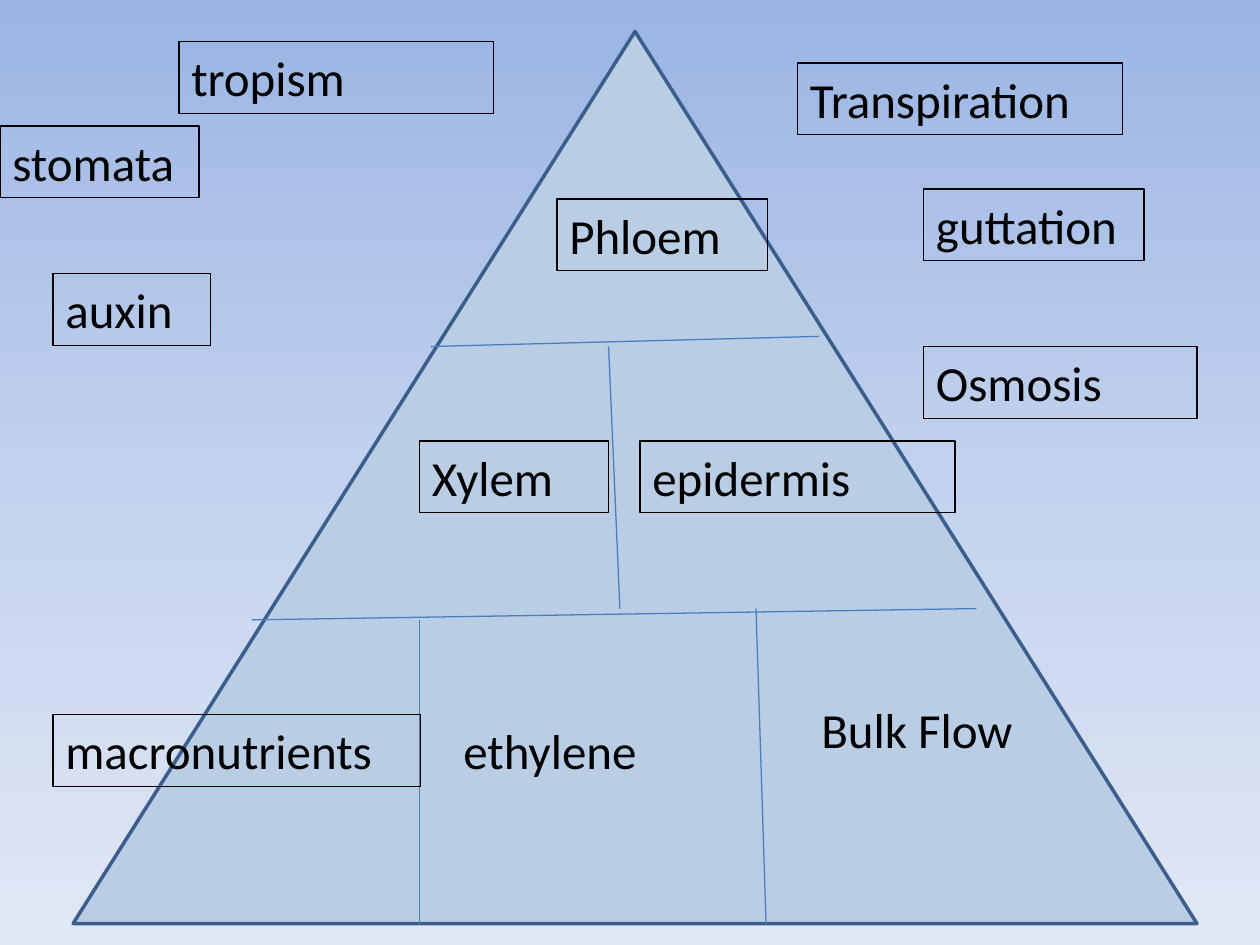
from copy import deepcopy

from lxml.etree import SubElement
from pptx import Presentation
from pptx.dml.color import RGBColor
from pptx.enum.shapes import MSO_CONNECTOR, MSO_SHAPE
from pptx.enum.text import MSO_AUTO_SIZE
from pptx.oxml.ns import qn
from pptx.util import Inches, Pt

SKY_STOPS = [
    (0, RGBColor(0x9A, 0xB5, 0xE4)),
    (0.5, RGBColor(0xC2, 0xD1, 0xED)),
    (1, RGBColor(0xE1, 0xE8, 0xF5)),
]
PYRAMID_FILL = RGBColor(0xB9, 0xCD, 0xE5)
PYRAMID_EDGE = RGBColor(0x3A, 0x5F, 0x8C)
DIVIDER_BLUE = RGBColor(0x4B, 0x7E, 0xBC)
BLACK = RGBColor(0, 0, 0)

TERM_HEIGHT = 0.57
TERM_FONT = {"name": "Calibri", "size": Pt(28)}

# Start x, start y, end x, end y
DIVIDERS = [
    (2, 4.92, 7.75, 4.83),
    (3.42, 2.75, 6.5, 2.67),
    (4.83, 2.75, 4.92, 4.83),
    (3.33, 4.92, 3.33, 7.33),
    (6, 4.83, 6.08, 7.33),
]

# Term, left, top, width
FRAMED_TERMS = [
    ("Transpiration", 6.33, 0.5, 2.58),
    ("stomata", 0, 1, 1.58),
    ("guttation", 7.33, 1.5, 1.75),
    ("auxin", 0.42, 2.17, 1.25),
    ("tropism", 1.42, 0.33, 2.5),
    ("Osmosis", 7.33, 2.75, 2.17),
    ("Phloem", 4.42, 1.58, 1.67),
    ("Xylem", 3.33, 3.5, 1.5),
    ("epidermis", 5.08, 3.5, 2.5),
    ("macronutrients", 0.42, 5.67, 2.92),
]
PLAIN_TERMS = [
    ("ethylene", 3.58, 5.67, 2.33),
    ("Bulk Flow", 6.42, 5.5, 2.33),
]


def set_line(line, color, width):
    line.color.rgb = color
    line.width = Pt(width)


def paint_background(slide):
    sky = slide.background.fill
    sky.gradient()
    sky.gradient_angle = 270  # counter-clockwise, so top to bottom
    stop_list = slide.element.find(".//" + qn("a:gsLst"))
    stop_list.insert(1, deepcopy(stop_list[0]))
    for stop, (position, color) in zip(sky.gradient_stops, SKY_STOPS):
        stop.position = position
        stop.color.rgb = color


def add_pyramid(slide):
    pyramid = slide.shapes.add_shape(
        MSO_SHAPE.ISOSCELES_TRIANGLE,
        Inches(0.58), Inches(0.25), Inches(8.92), Inches(7.08))
    pyramid.shadow.inherit = False
    pyramid.fill.solid()
    pyramid.fill.fore_color.rgb = PYRAMID_FILL
    set_line(pyramid.line, PYRAMID_EDGE, 2)


def add_divider(slide, ends):
    divider = slide.shapes.add_connector(
        MSO_CONNECTOR.STRAIGHT, *(Inches(value) for value in ends))
    set_line(divider.line, DIVIDER_BLUE, 0.75)
    SubElement(divider.element.spPr, qn("a:effectLst"))


def add_term(slide, term, left, top, width, framed):
    label = slide.shapes.add_textbox(
        Inches(left), Inches(top), Inches(width), Inches(TERM_HEIGHT))
    if framed:
        set_line(label.line, BLACK, 0.75)
    frame = label.text_frame
    frame.word_wrap = True
    frame.auto_size = MSO_AUTO_SIZE.SHAPE_TO_FIT_TEXT
    frame.text = term
    font = frame.paragraphs[0].runs[0].font
    for attribute, value in TERM_FONT.items():
        setattr(font, attribute, value)
    font.color.rgb = BLACK


def main():
    prs = Presentation()
    prs.slide_width, prs.slide_height = Inches(10), Inches(7.5)
    slide = prs.slides.add_slide(prs.slide_layouts[6])

    # Backdrop and pyramid
    paint_background(slide)
    add_pyramid(slide)
    for ends in DIVIDERS:
        add_divider(slide, ends)

    # Vocabulary terms
    for terms, framed in ((FRAMED_TERMS, True), (PLAIN_TERMS, False)):
        for term, left, top, width in terms:
            add_term(slide, term, left, top, width, framed)

    prs.save("out.pptx")


if __name__ == "__main__":
    main()
